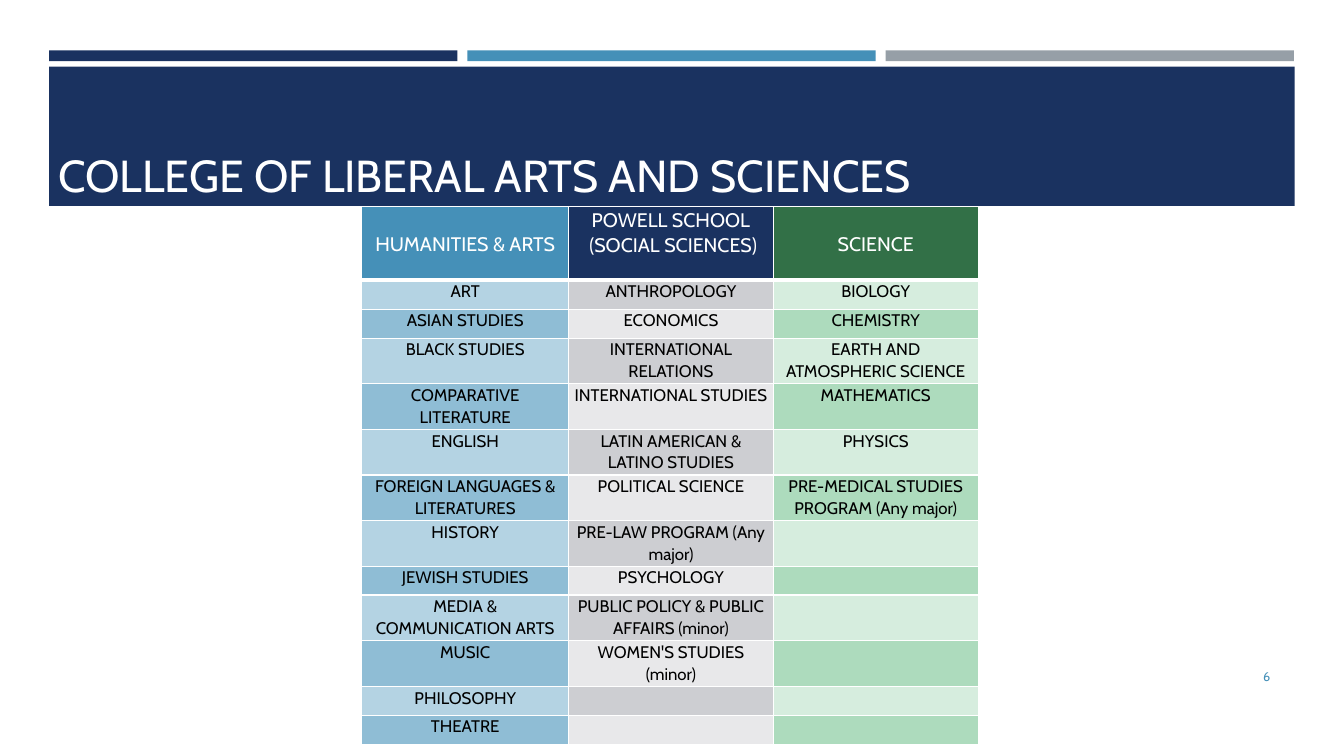
import pptx
import pptx.util
import pptx.dml.color
import pptx.enum.shapes
import pptx.enum.text
import lxml.etree
from pptx.util import Cm

FONT = "Cabin"
NAVY, BLUE, GREY, GREEN, WHITE, BLACK = "1A3260", "4590B8", "969FA7", "327047", "FFFFFF", "000000"
TITLE = "COLLEGE OF LIBERAL ARTS AND SCIENCES"
PAGE_NUMBER = "6"
HEADERS = ["HUMANITIES & ARTS", "POWELL SCHOOL\n (SOCIAL SCIENCES)", "SCIENCE"]
HEADER_FILLS = [BLUE, NAVY, GREEN]
BAND_FILLS = [("B4D3E3", "CDCED2", "D6EDDE"), ("8FBDD5", "E8E8EA", "ADDBBD")]
PROGRAMS = [
    ("ART", "ANTHROPOLOGY", "BIOLOGY"),
    ("ASIAN STUDIES", "ECONOMICS", "CHEMISTRY"),
    ("BLACK STUDIES", "INTERNATIONAL RELATIONS", "EARTH AND ATMOSPHERIC SCIENCE"),
    ("COMPARATIVE LITERATURE", "INTERNATIONAL STUDIES", "MATHEMATICS"),
    ("ENGLISH", "LATIN AMERICAN & LATINO STUDIES", "PHYSICS"),
    ("FOREIGN LANGUAGES & LITERATURES", "POLITICAL SCIENCE", "PRE-MEDICAL STUDIES PROGRAM (Any major)"),
    ("HISTORY", "PRE-LAW PROGRAM (Any major)", ""),
    ("JEWISH STUDIES", "PSYCHOLOGY", ""),
    ("MEDIA & COMMUNICATION ARTS", "PUBLIC POLICY & PUBLIC AFFAIRS (minor)", ""),
    ("MUSIC", "WOMEN'S STUDIES (minor)", ""),
    ("PHILOSOPHY", "", ""),
    ("THEATRE", "", ""),
]
COLUMN_WIDTHS = [5.21, 5.16, 5.16]
HEADER_HEIGHT, ONE_LINE, TWO_LINES = 1.85, 0.73, 1.15
ONE_LINE_ROWS = {1, 2, 8, 11, 12}

ALIGN = pptx.enum.text.PP_ALIGN
ANCHOR = pptx.enum.text.MSO_ANCHOR


def color(value):
    return pptx.dml.color.RGBColor.from_string(value)


def format_text(paragraph, size, value, align):
    paragraph.alignment = align
    for run in paragraph.runs:
        run.font.name = FONT
        run.font.size = pptx.util.Pt(size)
        run.font.color.rgb = color(value)


def add_bar(slide, left, top, width, height, fill):
    shape = slide.shapes.add_shape(
        pptx.enum.shapes.MSO_SHAPE.RECTANGLE, Cm(left), Cm(top), Cm(width), Cm(height))
    shape.shadow.inherit = False
    shape.fill.solid()
    shape.fill.fore_color.rgb = color(fill)
    shape.line.fill.background()


def add_borders(cell, bottom_width):
    properties = cell._tc.get_or_add_tcPr()
    widths = {"lnL": 1, "lnR": 1, "lnT": 1, "lnB": bottom_width}
    for position, (side, width) in enumerate(widths.items()):
        line = lxml.etree.Element(pptx.oxml.ns.qn(f"a:{side}"), w=str(pptx.util.Pt(width)))
        fill = lxml.etree.SubElement(line, pptx.oxml.ns.qn("a:solidFill"))
        lxml.etree.SubElement(fill, pptx.oxml.ns.qn("a:srgbClr"), val=WHITE)
        properties.insert(position, line)


def fill_cell(cell, text, fill, size, value, bottom_width):
    cell.text_frame.text = text
    cell.margin_left = cell.margin_right = Cm(0.15)
    cell.margin_top = cell.margin_bottom = 0
    cell.fill.solid()
    cell.fill.fore_color.rgb = color(fill)
    for paragraph in cell.text_frame.paragraphs:
        paragraph.line_spacing = 1.07
        format_text(paragraph, size, value, ALIGN.CENTER)
        if not text:
            paragraph._p.get_or_add_endParaRPr().set("sz", str(size * 100))
    add_borders(cell, bottom_width)


def add_program_table(slide):
    heights = [HEADER_HEIGHT] + [
        ONE_LINE if row in ONE_LINE_ROWS else TWO_LINES for row in range(1, len(PROGRAMS) + 1)]
    table = slide.shapes.add_table(
        len(heights), len(HEADERS), Cm(9.12), Cm(5.21),
        Cm(sum(COLUMN_WIDTHS)), Cm(sum(heights))).table
    for column, width in zip(table.columns, COLUMN_WIDTHS):
        column.width = Cm(width)
    for row, height in zip(table.rows, heights):
        row.height = Cm(height)
    for column, (text, fill) in enumerate(zip(HEADERS, HEADER_FILLS)):
        cell = table.cell(0, column)
        fill_cell(cell, text, fill, 14, WHITE, 3)
        cell.vertical_anchor = ANCHOR.TOP if "\n" in text else ANCHOR.MIDDLE
    table.cell(0, 0).text_frame.paragraphs[0].space_before = pptx.util.Pt(24)
    for row, names in enumerate(PROGRAMS):
        for column, name in enumerate(names):
            fill_cell(table.cell(row + 1, column), name, BAND_FILLS[row % 2][column], 12, BLACK, 1)


def main():
    presentation = pptx.Presentation()
    presentation.slide_width, presentation.slide_height = Cm(33.87), Cm(19.05)
    slide = presentation.slides.add_slide(presentation.slide_layouts[5])

    for index, fill in enumerate([NAVY, BLUE, GREY]):
        add_bar(slide, 1.24 + 10.54 * index, 1.27, 10.29, 0.27, fill)
    add_bar(slide, 1.24, 1.68, 31.39, 3.51, NAVY)

    title = slide.shapes.title
    title.left, title.top, title.width, title.height = Cm(1.22), Cm(1.83), Cm(24.79), Cm(3.38)
    title.text_frame.text = TITLE
    title.text_frame.vertical_anchor = ANCHOR.BOTTOM
    title.text_frame.word_wrap = True
    format_text(title.text_frame.paragraphs[0], 32, WHITE, ALIGN.LEFT)
    slide.shapes._spTree.append(title._element)

    number = slide.shapes.add_textbox(Cm(29.34), Cm(16.54), Cm(2.92), Cm(1.02))
    number.text_frame.word_wrap = True
    number.text_frame.text = PAGE_NUMBER
    number.text_frame.vertical_anchor = ANCHOR.MIDDLE
    format_text(number.text_frame.paragraphs[0], 9, BLUE, ALIGN.RIGHT)

    add_program_table(slide)
    presentation.save("out.pptx")


if __name__ == "__main__":
    main()
